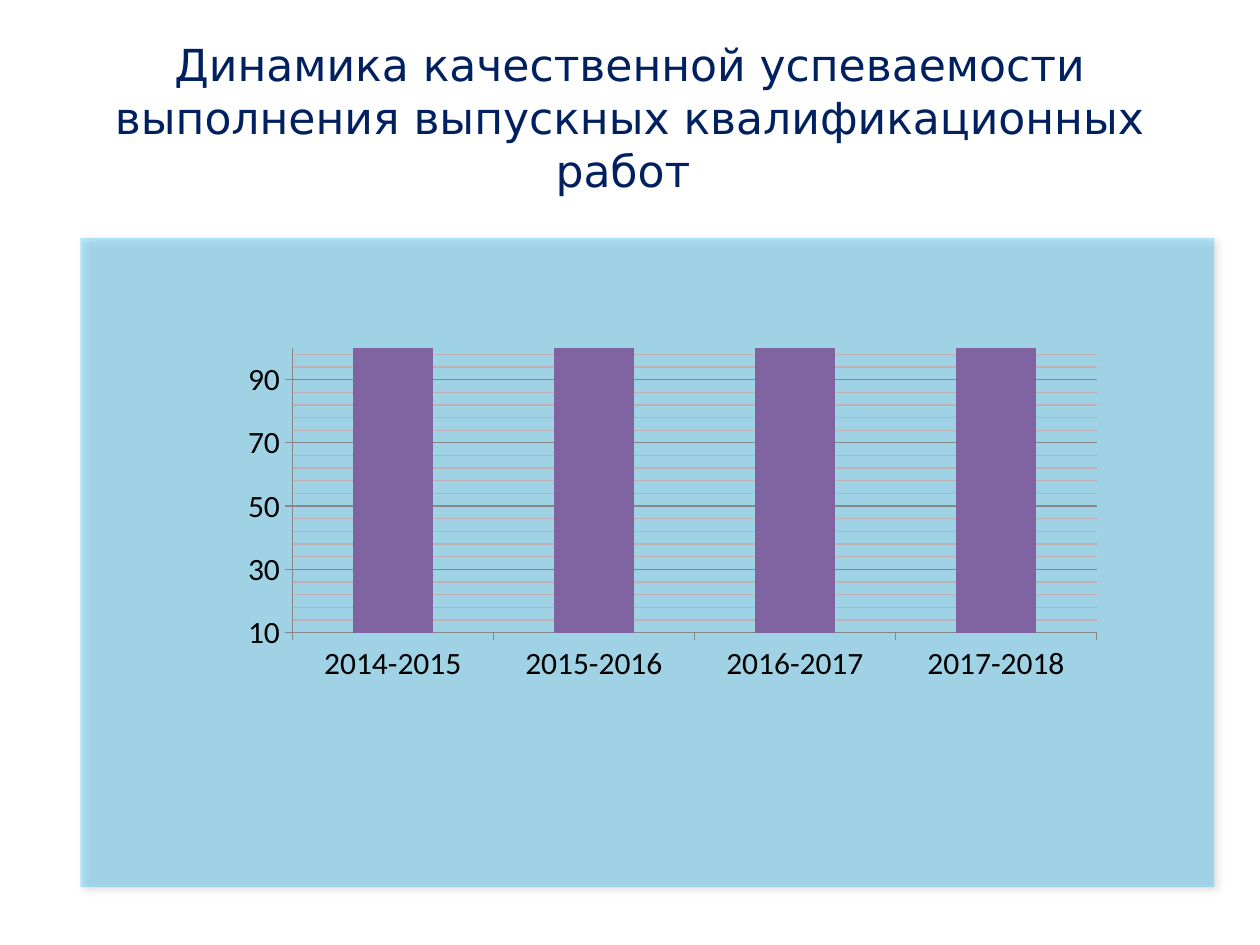
from lxml.etree import SubElement
from pptx import Presentation
from pptx.chart.data import CategoryChartData
from pptx.dml.color import RGBColor
from pptx.enum.chart import XL_CHART_TYPE, XL_TICK_MARK
from pptx.enum.shapes import MSO_SHAPE
from pptx.enum.text import MSO_ANCHOR, MSO_AUTO_SIZE, PP_ALIGN
from pptx.oxml import parse_xml
from pptx.oxml.ns import nsdecls, qn
from pptx.util import Pt

NAVY = RGBColor(0x00, 0x20, 0x60)
SKY = RGBColor(0x00, 0xB0, 0xF0)
PURPLE = RGBColor(0x80, 0x64, 0xA2)
GREY = RGBColor(0x87, 0x87, 0x87)
ROSE_GREY = RGBColor(0xC0, 0xB0, 0xB4)
BLACK = RGBColor(0x00, 0x00, 0x00)

PANEL_SHADOW = (
    f'<a:effectLst {nsdecls("a")}>'
    '<a:outerShdw blurRad="50800" dist="38100" dir="2700000" algn="tl" rotWithShape="0">'
    '<a:srgbClr val="000000"><a:alpha val="40000"/></a:srgbClr>'
    '</a:outerShdw></a:effectLst>'
)


class SlideBuilder:
    title_font = "DejaVu Sans"
    chart_font = "Calibri"

    def __init__(self, slide):
        self.slide = slide

    def title(self, wording, left, top, width, height):
        heading = self.slide.shapes.title
        heading.left, heading.top = Pt(left), Pt(top)
        heading.width, heading.height = Pt(width), Pt(height)
        frame = heading.text_frame
        frame.text = wording
        frame.word_wrap = True
        frame.auto_size = MSO_AUTO_SIZE.NONE
        frame.vertical_anchor = MSO_ANCHOR.MIDDLE
        paragraph = frame.paragraphs[0]
        paragraph.alignment = PP_ALIGN.CENTER
        paragraph.font.name = self.title_font
        paragraph.font.size = Pt(25.2)
        paragraph.font.color.rgb = NAVY

    def panel(self, left, top, width, height):
        backdrop = self.slide.shapes.add_shape(
            MSO_SHAPE.RECTANGLE, Pt(left), Pt(top), Pt(width), Pt(height))
        backdrop.fill.solid()
        backdrop.fill.fore_color.rgb = SKY
        backdrop.line.fill.background()
        properties = backdrop._element.spPr
        tint = properties.find(qn("a:solidFill"))[0]
        SubElement(tint, qn("a:alpha")).set("val", "29000")
        properties.append(parse_xml(PANEL_SHADOW))

    def column_chart(self, years, series_name, values, left, top, width, height):
        results = CategoryChartData()
        results.categories = years
        results.add_series(series_name, values)
        chart = self.slide.shapes.add_chart(
            XL_CHART_TYPE.COLUMN_CLUSTERED,
            Pt(left), Pt(top), Pt(width), Pt(height), results).chart
        chart.has_legend = False
        chart.has_title = False
        chart.font.name = self.chart_font
        chart.font.size = Pt(18)
        chart.font.color.rgb = BLACK

        plot = chart.plots[0]
        plot.vary_by_categories = False
        plot.gap_width = 150
        bars = plot.series[0].format.fill
        bars.solid()
        bars.fore_color.rgb = PURPLE

        percent = chart.value_axis
        percent.minimum_scale, percent.maximum_scale = 10, 100
        percent.major_unit, percent.minor_unit = 20, 4
        percent.has_major_gridlines = percent.has_minor_gridlines = True
        self.rule(percent.major_gridlines.format.line, GREY)
        self.minor_grid(percent, ROSE_GREY)
        for axis in (percent, chart.category_axis):
            axis.major_tick_mark = XL_TICK_MARK.OUTSIDE
            axis.minor_tick_mark = XL_TICK_MARK.NONE
            self.rule(axis.format.line, GREY)
        self.plot_area(chart, x=0.1, y=0.04, w=0.9, h=0.83)

    def rule(self, line, color):
        line.color.rgb = color
        line.width = Pt(0.75)

    def minor_grid(self, axis, color):
        gridlines = axis._element.find(qn("c:minorGridlines"))
        gridlines.append(parse_xml(
            f'<c:spPr {nsdecls("c", "a")}><a:ln w="{Pt(0.75)}"><a:solidFill>'
            f'<a:srgbClr val="{color}"/></a:solidFill></a:ln></c:spPr>'))

    def plot_area(self, chart, **fractions):
        area = chart._chartSpace.chart.plotArea
        for old_layout in area.findall(qn("c:layout")):
            area.remove(old_layout)
        layout = parse_xml(f'<c:layout {nsdecls("c")}/>')
        manual = SubElement(layout, qn("c:manualLayout"))
        settings = {"layoutTarget": "inner", "xMode": "edge", "yMode": "edge", **fractions}
        for tag, value in settings.items():
            SubElement(manual, qn(f"c:{tag}")).set("val", str(value))
        area.insert(0, layout)


def main():
    presentation = Presentation()
    presentation.slide_width, presentation.slide_height = Pt(720), Pt(540)
    builder = SlideBuilder(presentation.slides.add_slide(presentation.slide_layouts[5]))
    builder.title(
        "Динамика качественной успеваемости выполнения выпускных квалификационных работ ",
        36, 21.6, 648, 90)
    builder.panel(46, 136, 648, 371)
    years = [f"{start}-{start + 1}" for start in range(2014, 2018)]
    builder.column_chart(years, "Series 1", [100] * len(years), 116, 191, 511, 199)
    presentation.save("out.pptx")


if __name__ == "__main__":
    main()
